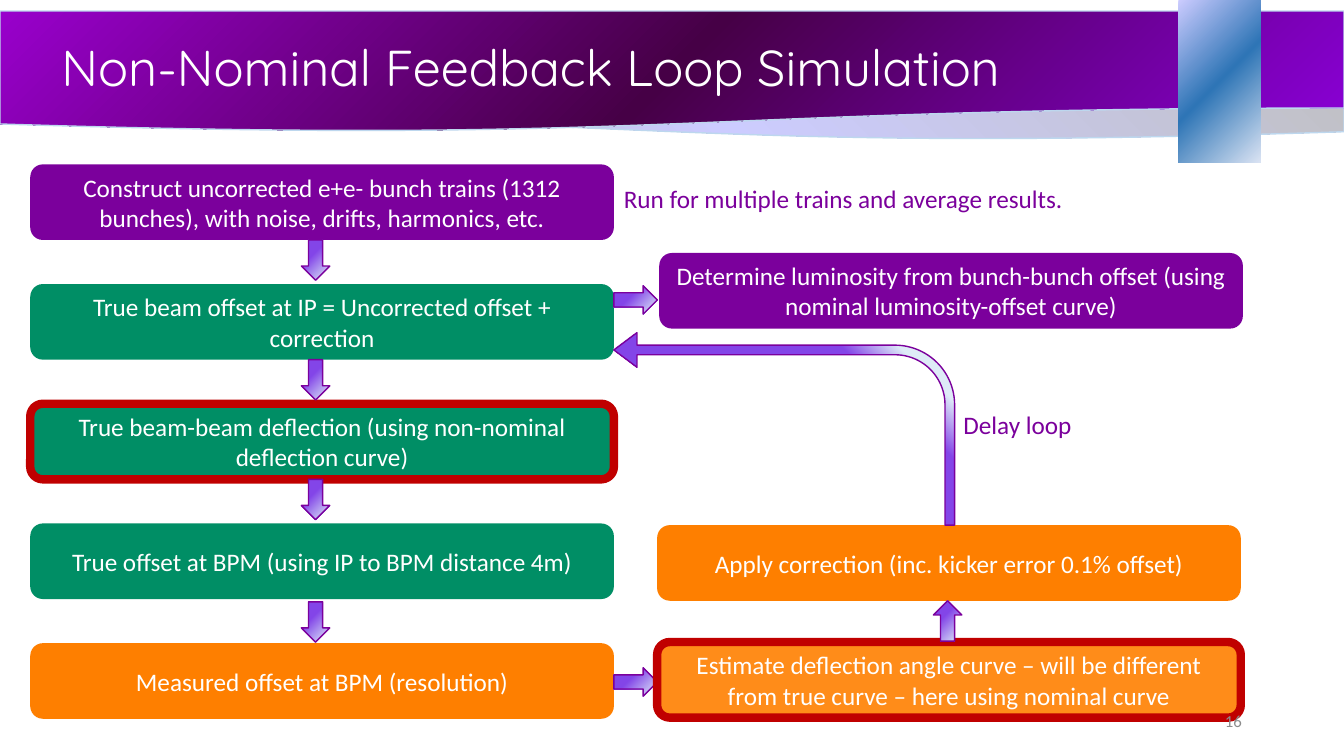
from typing import NamedTuple

from pptx import Presentation
from pptx.dml.color import RGBColor
from pptx.enum.shapes import MSO_SHAPE as Preset
from pptx.enum.text import MSO_ANCHOR as Anchor, PP_ALIGN as Align
from pptx.oxml import parse_xml
from pptx.oxml.ns import nsdecls, qn
from pptx.util import Pt

PURPLE, GREEN, ORANGE, LIGHT_ORANGE = "7B009C", "008E65", "FE7F00", "FF8C19"
RED, WHITE, PALE_BLUE, GREY = "C00000", "FFFFFF", "BDD7EE", "8C8C8C"
LEFT_COLUMN, RIGHT_COLUMN = 21.6, 469.4
FIRST_ROW, ROW_PITCH = 117.4, 85.5
BOX_WIDTH, BOX_HEIGHT = 416.9, 54


class Gradient(NamedTuple):
    stops: tuple[tuple[int, str], ...]
    angle: int | None = None  # None: radial, centred on the bottom right corner


class Band(NamedTuple):
    preset: Preset
    left: float
    top: float
    width: float
    height: float
    gradient: Gradient
    line: str | None = None
    flipped: bool = False


class Box(NamedTuple):
    left: float
    top: float
    text: str
    fill: str
    outlined: bool = False


class Arrow(NamedTuple):
    left: float
    top: float
    length: float = 28.8
    rotation: int = 0


class Label(NamedTuple):
    left: float
    top: float
    width: float
    text: str
    size: int = 18
    color: str = PURPLE
    align: Align = Align.LEFT
    anchor: Anchor = Anchor.TOP


ARROW_WIDTH = 20.3
ARROW_FILL = Gradient(((3, "DEEBF7"), (62, "8345E8"), (92, "8345E8"), (100, "DEEBF7")))
LOOP_FILL = Gradient(((13, "DEEBF7"), (24, "8345E8"), (89, "8345E8")), 45)

BANDS = [
    Band(Preset.FLOWCHART_DOCUMENT, 0, 9.4, 960, 90.7,
         Gradient(((0, "A6A6A6"), (50, "CCCCFF"), (100, "BFBFBF")), 225), PALE_BLUE, True),
    Band(Preset.FLOWCHART_DOCUMENT, 0, 7.9, 960, 86.4,
         Gradient(((0, "8A00D6"), (50, "460046"), (100, "9900CC")), 225), PALE_BLUE),
    Band(Preset.RECTANGLE, 841.7, 0, 59, 115.9,
         Gradient(((0, "DAE3F3"), (50, "2E75B6"), (100, "CCCCFF")))),
]

LEFT_STEPS = [
    ("Construct uncorrected e+e- bunch trains (1312 bunches), with noise, drifts, "
     "harmonics, etc.", PURPLE, False),
    ("True beam offset at IP = Uncorrected offset + correction", GREEN, False),
    ("True beam-beam deflection (using non-nominal deflection curve)", GREEN, True),
    ("True offset at BPM (using IP to BPM distance 4m)", GREEN, False),
    ("Measured offset at BPM (resolution)", ORANGE, False),
]
LEFT_BOXES = [Box(LEFT_COLUMN, FIRST_ROW + row * ROW_PITCH, *step)
              for row, step in enumerate(LEFT_STEPS)]
RIGHT_BOXES = [
    Box(RIGHT_COLUMN, 458.6, "Estimate deflection angle curve – will be different from "
        "true curve – here using nominal curve", LIGHT_ORANGE, True),
    Box(RIGHT_COLUMN, 375.1, "Apply correction (inc. kicker error 0.1% offset)", ORANGE),
    Box(470.9, 180.7, "Determine luminosity from bunch-bunch offset (using nominal "
        "luminosity-offset curve)", PURPLE),
]

DOWN_ARROWS = [Arrow(215.3, box.top + BOX_HEIGHT + gap)
               for box, gap in zip(LEFT_BOXES, (0, 0, 0, 2))]
RIGHT_ARROWS = [Arrow(443.9, top, 31, 270) for top in (198.7, 471.6)]
UP_ARROW = Arrow(666.7, 429.1, rotation=180)

LABELS = [
    Label(438.5, 127.4, 330.5, "Run for multiple trains and average results."),
    Label(681.1, 288.7, 121, "Delay loop"),
    Label(678.2, 500.4, 216, "16", 12, GREY, Align.RIGHT, Anchor.MIDDLE),
]


def rgb(color: str) -> RGBColor:
    return RGBColor.from_string(color)


def add_shape(slide, preset: Preset, left: float, top: float, width: float, height: float,
              line: str | None = None, line_width: float = 1):
    shape = slide.shapes.add_shape(preset, Pt(left), Pt(top), Pt(width), Pt(height))
    shape.shadow.inherit = False
    if line:
        shape.line.color.rgb = rgb(line)
        shape.line.width = Pt(line_width)
    else:
        shape.line.fill.background()
    return shape


def fill_gradient(shape, gradient: Gradient) -> None:
    stops = "".join(f'<a:gs pos="{position * 1000}"><a:srgbClr val="{color}"/></a:gs>'
                    for position, color in gradient.stops)
    if gradient.angle is None:
        direction = '<a:path path="circle"><a:fillToRect l="100000" t="100000"/></a:path>'
    else:
        direction = f'<a:lin ang="{gradient.angle * 60000}" scaled="0"/>'
    shape.fill.gradient()
    properties = shape.element.spPr
    properties.replace(properties.find(qn("a:gradFill")), parse_xml(
        f'<a:gradFill {nsdecls("a")} rotWithShape="1"><a:gsLst>{stops}</a:gsLst>'
        f'{direction}</a:gradFill>'))


def flip(shape) -> None:
    shape.element.spPr.get_or_add_xfrm().set("flipH", "1")


def write(shape, text: str, size: int, color: str, align: Align, anchor: Anchor,
          font_name: str = "Calibri"):
    frame = shape.text_frame
    frame.text = text
    frame.word_wrap = True
    frame.vertical_anchor = anchor
    paragraph = frame.paragraphs[0]
    paragraph.alignment = align
    font = paragraph.runs[0].font
    font.name, font.size, font.color.rgb = font_name, Pt(size), rgb(color)
    return paragraph


def add_band(slide, band: Band) -> None:
    shape = add_shape(slide, band.preset, band.left, band.top, band.width, band.height, band.line)
    fill_gradient(shape, band.gradient)
    if band.flipped:
        flip(shape)


def add_box(slide, box: Box) -> None:
    shape = add_shape(slide, Preset.ROUNDED_RECTANGLE, box.left, box.top, BOX_WIDTH, BOX_HEIGHT,
                      RED if box.outlined else None, 6)
    shape.fill.solid()
    shape.fill.fore_color.rgb = rgb(box.fill)
    write(shape, box.text, 18, WHITE, Align.CENTER, Anchor.MIDDLE)


def add_arrow(slide, arrow: Arrow) -> None:
    shape = add_shape(slide, Preset.DOWN_ARROW, arrow.left, arrow.top, ARROW_WIDTH,
                      arrow.length, PURPLE)
    shape.rotation = arrow.rotation
    fill_gradient(shape, ARROW_FILL)


def add_delay_loop(slide) -> None:
    shape = add_shape(slide, Preset.BENT_ARROW, 438.5, 237.6, 243.4, 137.5, PURPLE)
    for index, value in enumerate((0.05, 0.09, 0.12, 0.31)):
        shape.adjustments[index] = value
    fill_gradient(shape, LOOP_FILL)
    flip(shape)


def add_label(slide, label: Label) -> None:
    box = slide.shapes.add_textbox(Pt(label.left), Pt(label.top), Pt(label.width), Pt(28.8))
    write(box, label.text, label.size, label.color, label.align, label.anchor)


def place_title(slide) -> None:
    """Format the title and bring it in front of the bands."""
    title = slide.shapes.title
    title.left, title.top, title.width, title.height = Pt(36.7), Pt(8.6), Pt(828), Pt(83.5)
    paragraph = write(title, "Non-Nominal Feedback Loop Simulation", 36, WHITE,
                      Align.LEFT, Anchor.MIDDLE, "Quicksand")
    paragraph.line_spacing = 0.9
    title.element.getparent().append(title.element)


def main() -> None:
    presentation = Presentation()
    presentation.slide_width, presentation.slide_height = Pt(960), Pt(540)
    slide = presentation.slides.add_slide(presentation.slide_layouts.get_by_name("Title Only"))
    for band in BANDS:
        add_band(slide, band)
    place_title(slide)
    for box in LEFT_BOXES:
        add_box(slide, box)
    for arrow in DOWN_ARROWS + RIGHT_ARROWS:
        add_arrow(slide, arrow)
    for box in RIGHT_BOXES:
        add_box(slide, box)
    add_arrow(slide, UP_ARROW)
    add_delay_loop(slide)
    for label in LABELS:
        add_label(slide, label)
    presentation.save("out.pptx")


if __name__ == "__main__":
    main()
